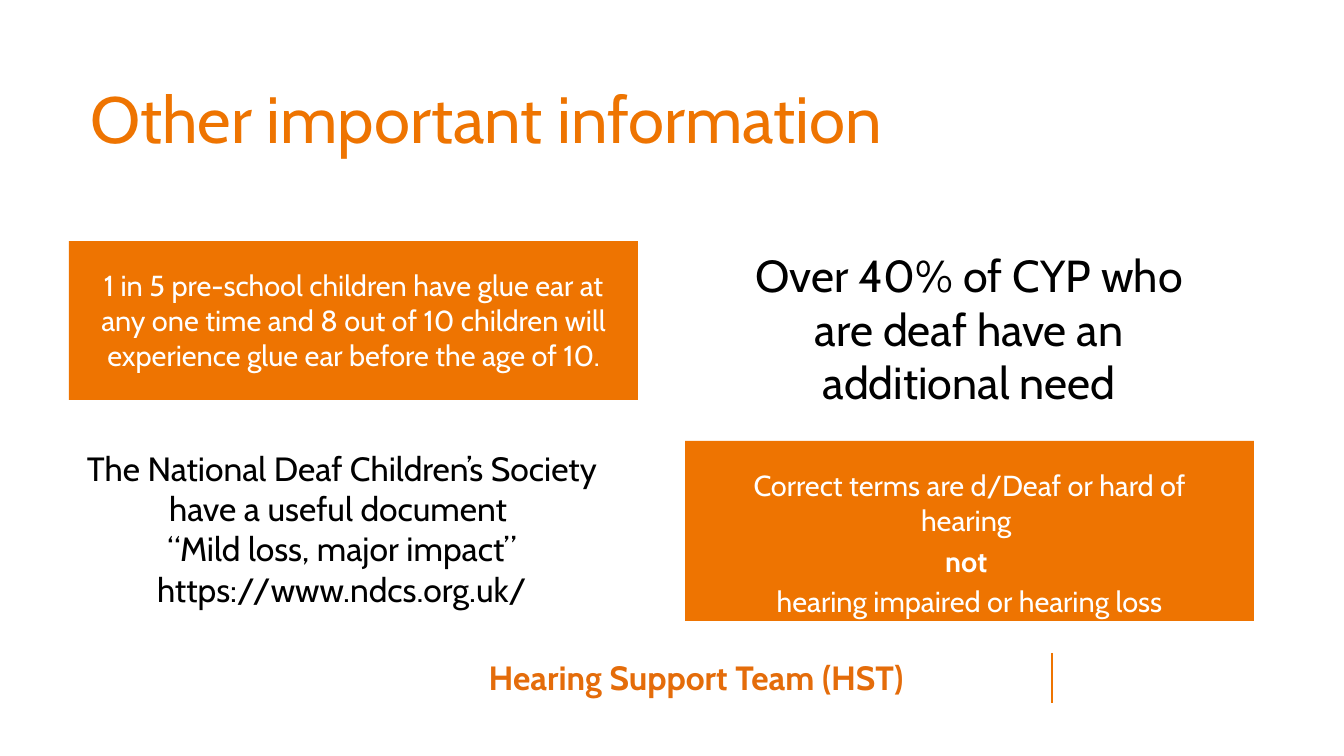
from dataclasses import dataclass

from lxml.etree import SubElement
from pptx import Presentation
from pptx.dml.color import RGBColor
from pptx.enum.shapes import MSO_CONNECTOR
from pptx.enum.text import MSO_ANCHOR, MSO_AUTO_SIZE, PP_ALIGN
from pptx.oxml.ns import qn
from pptx.shapes.base import BaseShape
from pptx.slide import Slide
from pptx.text.text import TextFrame
from pptx.util import Pt

EMU_PER_PX = 914400 / 134.4


def px(length: int) -> int:
    return round(length * EMU_PER_PX)


@dataclass(frozen=True)
class Theme:
    font: str = "Cabin"
    orange: RGBColor = RGBColor(0xEE, 0x74, 0x01)
    footer_orange: RGBColor = RGBColor(0xE4, 0x6C, 0x0A)
    white: RGBColor = RGBColor(0xFF, 0xFF, 0xFF)
    black: RGBColor = RGBColor(0, 0, 0)
    title_size: float = 35
    fact_size: float = 24
    note_size: float = 18
    panel_size: float = 15.5


THEME = Theme()


@dataclass(frozen=True)
class Box:
    left: int
    top: int
    width: int
    height: int

    def emu(self) -> tuple[int, ...]:
        return tuple(px(n) for n in (self.left, self.top, self.width, self.height))


@dataclass(frozen=True)
class Line:
    text: str
    bold: bool = False


@dataclass(frozen=True)
class Style:
    size: float
    color: RGBColor
    align: PP_ALIGN = PP_ALIGN.CENTER
    space_before: float = 0
    line_spacing: float = 1.0


@dataclass(frozen=True)
class Block:
    box: Box
    lines: tuple[Line, ...]
    style: Style
    wrap: bool = True


PANEL = Style(THEME.panel_size, THEME.white, space_before=3.1)
NOTE = Style(THEME.note_size, THEME.black)

TITLE = Block(
    Box(90, 50, 1164, 106),
    (Line("Other important information"),),
    Style(THEME.title_size, THEME.orange, PP_ALIGN.LEFT, line_spacing=0.8),
)
PANELS = (
    Block(
        Box(69, 241, 569, 159),
        (Line("1 in 5 pre-school children have glue ear at any one time and 8 out of 10 "
              "children will experience glue ear before the age of 10."),),
        PANEL,
    ),
    Block(
        Box(685, 441, 569, 180),
        (
            Line("Correct terms are d/Deaf or hard of hearing "),
            Line("not ", bold=True),
            Line("hearing impaired or hearing loss"),
        ),
        PANEL,
    ),
)
TEXTS = (
    Block(
        Box(715, 241, 508, 176),
        (Line("Over 40% of CYP who are deaf have an additional need"),),
        Style(THEME.fact_size, THEME.black),
    ),
    Block(
        Box(47, 441, 590, 176),
        (
            Line("The National Deaf Children’s Society have a useful document "),
            Line("“Mild loss, major impact”"),
            Line("https://www.ndcs.org.uk/"),
        ),
        NOTE,
    ),
    Block(
        Box(474, 650, 444, 54),
        (Line("Hearing Support Team (HST)", bold=True),),
        Style(THEME.note_size, THEME.footer_orange),
        wrap=False,
    ),
)


def apply(target: object, values: dict[str, object]) -> None:
    for name, value in values.items():
        setattr(target, name, value)


def write_lines(frame: TextFrame, lines: tuple[Line, ...], style: Style) -> None:
    for index, line in enumerate(lines):
        paragraph = frame.add_paragraph() if index else frame.paragraphs[0]
        properties = paragraph._p.get_or_add_pPr()
        apply_indent = {"marL": "0", "indent": "0"}
        for name, value in apply_indent.items():
            properties.set(name, value)
        SubElement(properties, qn("a:buNone"))
        apply(paragraph, {
            "alignment": style.align,
            "line_spacing": style.line_spacing,
            "space_before": Pt(style.space_before if index else 0),
        })
        run = paragraph.add_run()
        run.text = line.text
        apply(run.font, {"name": THEME.font, "size": Pt(style.size), "bold": line.bold})
        run.font.color.rgb = style.color


def fill_placeholder(shape: BaseShape, block: Block, inset: int, anchor: MSO_ANCHOR) -> None:
    apply(shape, dict(zip(("left", "top", "width", "height"), block.box.emu())))
    margins = {f"margin_{side}": px(inset) for side in ("left", "top", "right", "bottom")}
    apply(shape.text_frame, {
        **margins,
        "word_wrap": True,
        "auto_size": MSO_AUTO_SIZE.NONE,
        "vertical_anchor": anchor,
    })
    write_lines(shape.text_frame, block.lines, block.style)


def add_text(slide: Slide, block: Block) -> None:
    frame = slide.shapes.add_textbox(*block.box.emu()).text_frame
    apply(frame, {"word_wrap": block.wrap, "auto_size": MSO_AUTO_SIZE.SHAPE_TO_FIT_TEXT})
    write_lines(frame, block.lines, block.style)


def add_footer_rule(slide: Slide, x: int, top: int, bottom: int) -> None:
    rule = slide.shapes.add_connector(
        MSO_CONNECTOR.STRAIGHT, px(x), px(top), px(x), px(bottom))
    rule.line.color.rgb = THEME.orange
    rule.line.width = Pt(1)
    SubElement(rule._element.spPr, qn("a:effectLst"))


def main() -> None:
    deck = Presentation()
    apply(deck, {"slide_width": px(1344), "slide_height": px(756)})
    two_content = deck.slide_layouts[3]
    slide = deck.slides.add_slide(two_content)

    fill_placeholder(slide.shapes.title, TITLE, 0, MSO_ANCHOR.BOTTOM)
    for index, panel in enumerate(PANELS, start=1):
        body = slide.placeholders[index]
        fill_placeholder(body, panel, 27, MSO_ANCHOR.TOP)
        body.fill.solid()
        body.fill.fore_color.rgb = THEME.orange
    for block in TEXTS:
        add_text(slide, block)
    add_footer_rule(slide, 1052, 653, 703)

    deck.save("out.pptx")


if __name__ == "__main__":
    main()
